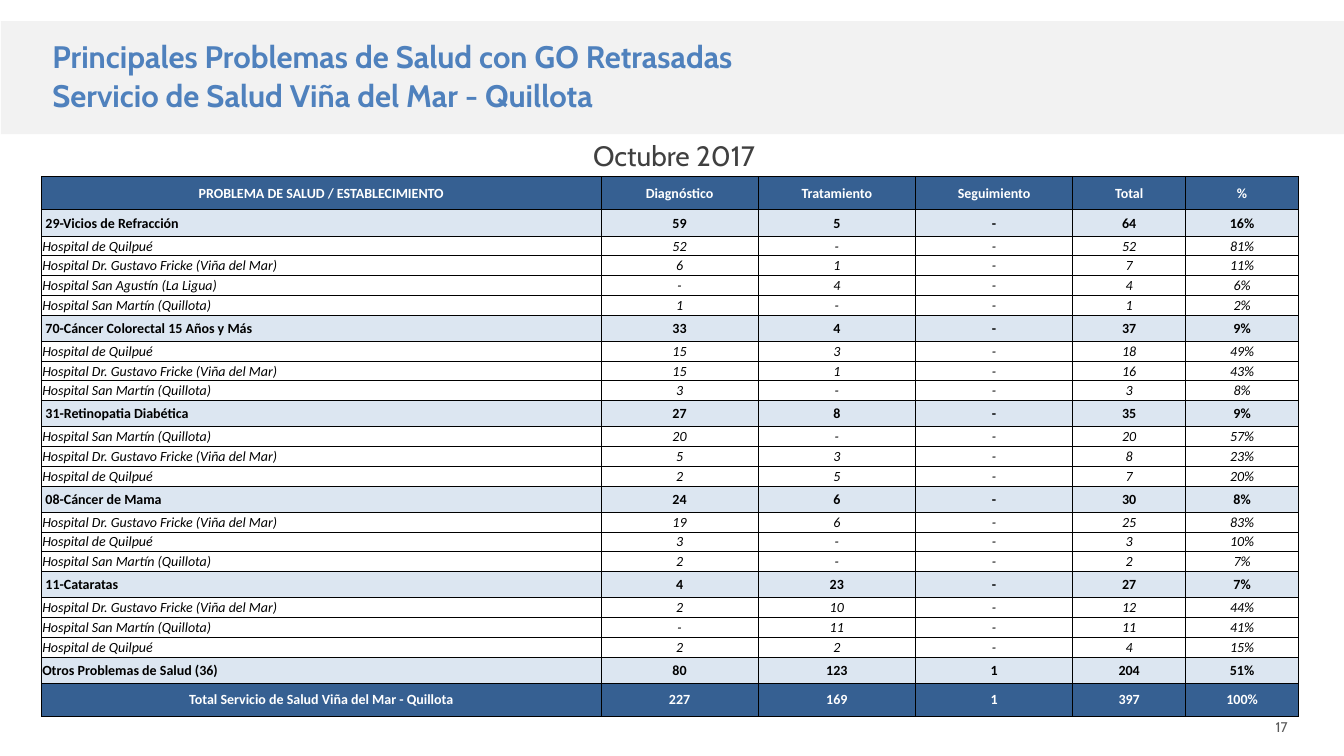
from dataclasses import dataclass

from lxml import etree
from pptx import Presentation
from pptx import util as u
from pptx.dml.color import RGBColor
from pptx.enum import shapes, text
from pptx.oxml import ns

COLORS = {
    "band": "F2F2F2", "title": "4F81BD", "subtitle": "404040", "number": "595959",
    "header": "366092", "group": "DCE6F1", "white": "FFFFFF", "black": "000000",
}
CENTER, RIGHT, LEFT = text.PP_ALIGN.CENTER, text.PP_ALIGN.RIGHT, text.PP_ALIGN.LEFT


@dataclass(frozen=True)
class Style:
    size: float
    color: str
    font: str = "Cabin"
    bold: bool = False
    italic: bool = False


@dataclass(frozen=True)
class Label:
    lines: tuple[str, ...]
    area: tuple[float, float, float, float]
    style: Style
    align: text.PP_ALIGN
    margins: tuple[float, float] = (0.1, 0.05)
    line_spacing: float = 1.0
    space_before: float = 0
    wrap: bool = True


@dataclass(frozen=True)
class RowKind:
    height: float
    style: Style
    fill: str | None = None
    name_align: text.PP_ALIGN = LEFT


@dataclass(frozen=True)
class Row:
    kind: RowKind
    name: str
    values: str


# Table proportions: detail rows share what the taller rows leave
TABLE_LEFT, TABLE_TOP, TABLE_HEIGHT = 0.41, 1.75, 5.36
COLUMNS = (5.55, 1.56, 1.56, 1.56, 1.12, 1.12)
HEADER_HEIGHT, GROUP_HEIGHT = 0.33, 0.26
DETAIL_HEIGHT = (TABLE_HEIGHT - 2 * HEADER_HEIGHT - 6 * GROUP_HEIGHT) / 16

HEADER = RowKind(HEADER_HEIGHT, Style(10, "white", "Calibri", bold=True), "header", CENTER)
GROUP = RowKind(GROUP_HEIGHT, Style(10, "black", "Calibri", bold=True), "group")
DETAIL = RowKind(DETAIL_HEIGHT, Style(10, "black", "Calibri", italic=True))

QUILPUE = "Hospital de Quilpué"
FRICKE = "Hospital Dr. Gustavo Fricke (Viña del Mar)"
LIGUA = "Hospital San Agustín (La Ligua)"
QUILLOTA = "Hospital San Martín (Quillota)"

ROWS = (
    Row(HEADER, "PROBLEMA DE SALUD / ESTABLECIMIENTO",
        "Diagnóstico Tratamiento Seguimiento Total %"),
    Row(GROUP, " 29-Vicios de Refracción", "59 5 - 64 16%"),
    Row(DETAIL, QUILPUE, "52 - - 52 81%"),
    Row(DETAIL, FRICKE, "6 1 - 7 11%"),
    Row(DETAIL, LIGUA, "- 4 - 4 6%"),
    Row(DETAIL, QUILLOTA, "1 - - 1 2%"),
    Row(GROUP, " 70-Cáncer Colorectal 15 Años y Más", "33 4 - 37 9%"),
    Row(DETAIL, QUILPUE, "15 3 - 18 49%"),
    Row(DETAIL, FRICKE, "15 1 - 16 43%"),
    Row(DETAIL, QUILLOTA, "3 - - 3 8%"),
    Row(GROUP, " 31-Retinopatia Diabética", "27 8 - 35 9%"),
    Row(DETAIL, QUILLOTA, "20 - - 20 57%"),
    Row(DETAIL, FRICKE, "5 3 - 8 23%"),
    Row(DETAIL, QUILPUE, "2 5 - 7 20%"),
    Row(GROUP, " 08-Cáncer de Mama", "24 6 - 30 8%"),
    Row(DETAIL, FRICKE, "19 6 - 25 83%"),
    Row(DETAIL, QUILPUE, "3 - - 3 10%"),
    Row(DETAIL, QUILLOTA, "2 - - 2 7%"),
    Row(GROUP, " 11-Cataratas", "4 23 - 27 7%"),
    Row(DETAIL, FRICKE, "2 10 - 12 44%"),
    Row(DETAIL, QUILLOTA, "- 11 - 11 41%"),
    Row(DETAIL, QUILPUE, "2 2 - 4 15%"),
    Row(GROUP, "Otros Problemas de Salud (36)", "80 123 1 204 51%"),
    Row(HEADER, "Total Servicio de Salud Viña del Mar - Quillota", "227 169 1 397 100%"),
)

LABELS = (
    Label(("17",), (12.46, 7.08, 0.41, 0.27), Style(10, "number"), RIGHT, wrap=False),
    Label(("Principales Problemas de Salud con GO Retrasadas",
           "Servicio de Salud Viña del Mar - Quillota"),
          (0.41, 0.35, 12.75, 0.86), Style(22.2, "title", bold=True), LEFT,
          margins=(0.11, 0.06), line_spacing=0.9, space_before=4.4),
    Label(("Octubre 2017",), (0.76, 1.32, 11.85, 0.44), Style(20, "subtitle"), CENTER,
          space_before=9.8),
)


def rgb(name: str) -> RGBColor:
    return RGBColor.from_string(COLORS[name])


def write(para, content: str, style: Style, align: text.PP_ALIGN) -> None:
    para.alignment = align
    span = para.add_run()
    span.text = content
    span.font.name = style.font
    span.font.size = u.Pt(style.size)
    span.font.bold = style.bold
    span.font.italic = style.italic
    span.font.color.rgb = rgb(style.color)


def add_band(page) -> None:
    band = page.shapes.add_shape(shapes.MSO_SHAPE.RECTANGLE, u.Inches(0.01), u.Inches(0.21),
                                 u.Inches(13.33), u.Inches(1.12))
    band.shadow.inherit = False
    band.fill.solid()
    band.fill.fore_color.rgb = rgb("band")
    band.line.fill.background()


def add_label(page, label: Label) -> None:
    box = page.shapes.add_textbox(*map(u.Inches, label.area))
    frame = box.text_frame
    frame.word_wrap = label.wrap
    frame.margin_left = frame.margin_right = u.Inches(label.margins[0])
    frame.margin_top = frame.margin_bottom = u.Inches(label.margins[1])
    for index, line in enumerate(label.lines):
        para = frame.add_paragraph() if index else frame.paragraphs[0]
        para.line_spacing = label.line_spacing
        para.space_before = u.Pt(label.space_before)
        write(para, line, label.style, label.align)


def add_borders(cell) -> None:
    properties = cell._tc.get_or_add_tcPr()
    for index, side in enumerate(("lnL", "lnR", "lnT", "lnB")):
        border = etree.Element(ns.qn(f"a:{side}"), w=str(u.Pt(0.5)))
        fill = etree.SubElement(border, ns.qn("a:solidFill"))
        etree.SubElement(fill, ns.qn("a:srgbClr"), val=COLORS["black"])
        properties.insert(index, border)


def fill_cell(cell, content: str, kind: RowKind, align: text.PP_ALIGN) -> None:
    cell.vertical_anchor = text.MSO_ANCHOR.MIDDLE
    cell.margin_left = cell.margin_right = cell.margin_top = u.Inches(0.01)
    cell.margin_bottom = 0
    if kind.fill:
        cell.fill.solid()
        cell.fill.fore_color.rgb = rgb(kind.fill)
    else:
        cell.fill.background()
    add_borders(cell)
    write(cell.text_frame.paragraphs[0], content, kind.style, align)


def add_problem_table(page) -> None:
    table = page.shapes.add_table(
        len(ROWS), len(COLUMNS), u.Inches(TABLE_LEFT), u.Inches(TABLE_TOP),
        u.Inches(sum(COLUMNS)), u.Inches(TABLE_HEIGHT)).table
    table.first_row = table.horz_banding = False
    for column, width in zip(table.columns, COLUMNS):
        column.width = u.Inches(width)
    for row_index, row in enumerate(ROWS):
        table.rows[row_index].height = u.Inches(row.kind.height)
        for column_index, content in enumerate((row.name, *row.values.split())):
            align = CENTER if column_index else row.kind.name_align
            fill_cell(table.cell(row_index, column_index), content, row.kind, align)


def main() -> None:
    deck = Presentation()
    deck.slide_width, deck.slide_height = u.Inches(13.33), u.Inches(7.5)
    page = deck.slides.add_slide(deck.slide_layouts[6])

    # Heading band, labels and page number
    add_band(page)
    for label in LABELS:
        add_label(page, label)

    # Delays by health problem and hospital
    add_problem_table(page)
    deck.save("out.pptx")


if __name__ == "__main__":
    main()
